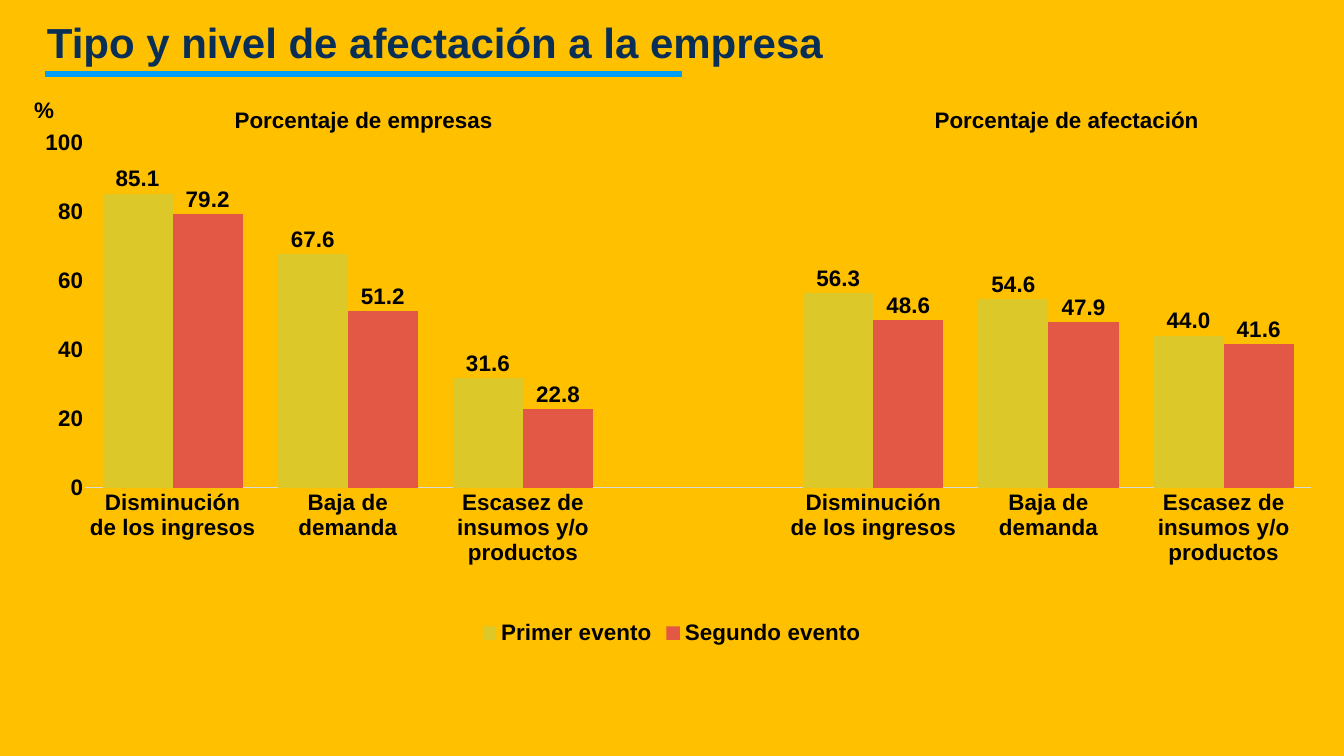
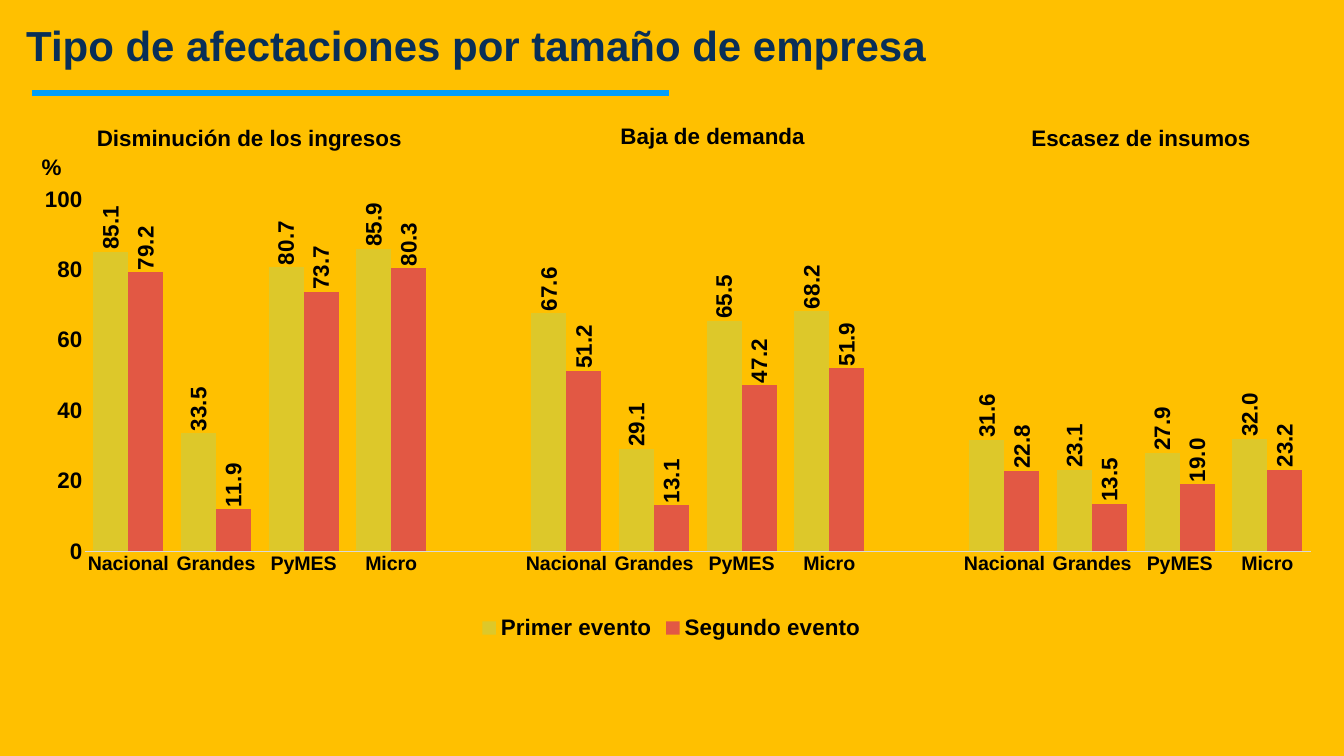
from dataclasses import dataclass
from lxml.etree import SubElement
from pptx import Presentation
from pptx.chart.data import CategoryChartData
from pptx.dml.color import RGBColor
from pptx.enum.chart import XL_CHART_TYPE, XL_LABEL_POSITION, XL_LEGEND_POSITION, XL_TICK_MARK
from pptx.enum.shapes import MSO_CONNECTOR
from pptx.enum.text import MSO_ANCHOR, MSO_AUTO_SIZE, PP_ALIGN
from pptx.oxml.ns import qn
from pptx.util import Pt


@dataclass(frozen=True)
class Theme:
    face: str = "Arial"
    ground: RGBColor = RGBColor.from_string("FFC000")
    navy: RGBColor = RGBColor.from_string("092F57")
    blue: RGBColor = RGBColor.from_string("009EF9")
    black: RGBColor = RGBColor.from_string("000000")
    grey: RGBColor = RGBColor.from_string("D9D9D9")
    bars: tuple = (RGBColor.from_string("DDC82A"), RGBColor.from_string("E25844"))
    head: int = 60
    label: int = 32
    small: int = 28


theme = Theme()


def style(font, size=theme.label, color=theme.black):
    font.name = theme.face
    font.size = Pt(size)
    font.bold = True
    font.color.rgb = color


def write(frame, text, inset, anchor, align, size, color):
    frame.word_wrap = True
    frame.vertical_anchor = anchor
    frame.margin_left = frame.margin_right = Pt(inset)
    frame.margin_top = frame.margin_bottom = Pt(inset)
    para = frame.paragraphs[0]
    para.alignment = align
    run = para.add_run()
    run.text = text
    style(run.font, size, color)


events = ("Primer evento", "Segundo evento")
pages = [
    dict(
        title="Tipo y nivel de afectación a la empresa",
        place=(63.4, 19.4, 1752.5, 62.6),
        rule=(64.1, 105.8),
        notes=[
            ("%", 34.6, 133.2, 56.9),
            ("Porcentaje de empresas", 175, 147.6, 689),
            ("Porcentaje de afectación", 1179.4, 147.6, 689),
        ],
        chart=(34.6, 180, 1849.7, 748.8),
        plot=(0.047, 0.031, 0.947, 0.659),
        names=["Disminución de los ingresos", "Baja de demanda", "Escasez de insumos y/o productos"],
        groups=[
            ([85.1, 67.6, 31.6], [79.2, 51.2, 22.8]),
            ([56.3, 54.6, 44.0], [48.6, 47.9, 41.6]),
        ],
        size=theme.label,
        turn=0,
    ),
    dict(
        title="Tipo de afectaciones por tamaño de empresa",
        place=(33.8, 23.8, 1820.2, 62.6),
        rule=(45.4, 132.5),
        notes=[
            ("%", 45.4, 214.6, 56.9),
            ("Disminución de los ingresos", 0, 173.5, 712.8),
            ("Baja de demanda", 661.7, 170.6, 712.8),
            ("Escasez de insumos", 1300.3, 173.5, 659.5),
        ],
        chart=(33.8, 261.4, 1850.4, 660.2),
        plot=(0.047, 0.035, 0.947, 0.762),
        names=["Nacional", "Grandes", "PyMES", "Micro"],
        groups=[
            ([85.1, 33.5, 80.7, 85.9], [79.2, 11.9, 73.7, 80.3]),
            ([67.6, 29.1, 65.5, 68.2], [51.2, 13.1, 47.2, 51.9]),
            ([31.6, 23.1, 27.9, 32.0], [22.8, 13.5, 19.0, 23.2]),
        ],
        size=theme.small,
        turn=-90,
    ),
]

deck = Presentation()
deck.slide_width, deck.slide_height = Pt(1920), Pt(1080)
fill = deck.slide_master.background.fill
fill.solid()
fill.fore_color.rgb = theme.ground

for page in pages:
    slide = deck.slides.add_slide(deck.slide_layouts[5])
    title = slide.shapes.title
    title.left, title.top, title.width, title.height = map(Pt, page["place"])
    write(title.text_frame, page["title"], 3.6, MSO_ANCHOR.TOP, PP_ALIGN.LEFT, theme.head, theme.navy)
    title.text_frame.auto_size = MSO_AUTO_SIZE.NONE

    left, top = page["rule"]
    rule = slide.shapes.add_connector(MSO_CONNECTOR.STRAIGHT, Pt(left), Pt(top), Pt(left + 910.8), Pt(top))
    rule.line.color.rgb = theme.blue
    rule.line.width = Pt(9)
    SubElement(rule._element.spPr, qn("a:effectLst"))

    data = CategoryChartData(number_format="0.0")
    data.categories = ((page["names"] + [""]) * len(page["groups"]))[:-1]
    for index, event in enumerate(events):
        values = []
        for group in page["groups"]:
            values += group[index] + [None]
        data.add_series(event, values[:-1])

    chart = slide.shapes.add_chart(XL_CHART_TYPE.COLUMN_CLUSTERED, *map(Pt, page["chart"]), data).chart
    style(chart.font)
    chart.has_title = False
    chart.has_legend = True
    chart.legend.position = XL_LEGEND_POSITION.BOTTOM
    chart.legend.include_in_layout = False
    style(chart.legend.font)

    area = chart._chartSpace.chart.plotArea
    layout = area.find(qn("c:layout"))
    if layout is None:
        layout = SubElement(area, qn("c:layout"))
        area.insert(0, layout)
    manual = SubElement(layout, qn("c:manualLayout"))
    fields = ("layoutTarget", "xMode", "yMode", "x", "y", "w", "h")
    for field, value in zip(fields, ("inner", "edge", "edge", *page["plot"])):
        SubElement(manual, qn("c:" + field)).set("val", str(value))

    for axis, size in ((chart.category_axis, page["size"]), (chart.value_axis, theme.label)):
        axis.major_tick_mark = axis.minor_tick_mark = XL_TICK_MARK.NONE
        axis.has_major_gridlines = False
        style(axis.tick_labels.font, size)
    chart.category_axis.format.line.color.rgb = theme.grey
    chart.category_axis.format.line.width = Pt(0.75)
    scale = chart.value_axis
    scale.minimum_scale, scale.maximum_scale, scale.major_unit = 0, 100, 20
    scale.tick_labels.number_format = "0"
    scale.tick_labels.number_format_is_linked = False
    scale.format.line.fill.background()

    plot = chart.plots[0]
    plot.gap_width, plot.overlap = 50, 0
    plot.vary_by_categories = False
    for series, color in zip(plot.series, theme.bars):
        series.format.fill.solid()
        series.format.fill.fore_color.rgb = color
        series.invert_if_negative = False
        labels = series.data_labels
        labels.show_value = True
        labels.number_format = "0.0"
        labels.number_format_is_linked = False
        labels.position = XL_LABEL_POSITION.OUTSIDE_END
        style(labels.font)
        body = labels._element.find(qn("c:txPr")).find(qn("a:bodyPr"))
        body.set("rot", str(page["turn"] * 60000))
        body.set("vert", "horz")

    for text, left, top, width in page["notes"]:
        box = slide.shapes.add_textbox(Pt(left), Pt(top), Pt(width), Pt(46.8))
        write(box.text_frame, text, 4.3, MSO_ANCHOR.MIDDLE, PP_ALIGN.CENTER, theme.label, theme.black)
        box.text_frame.auto_size = MSO_AUTO_SIZE.SHAPE_TO_FIT_TEXT

deck.save("out.pptx")
